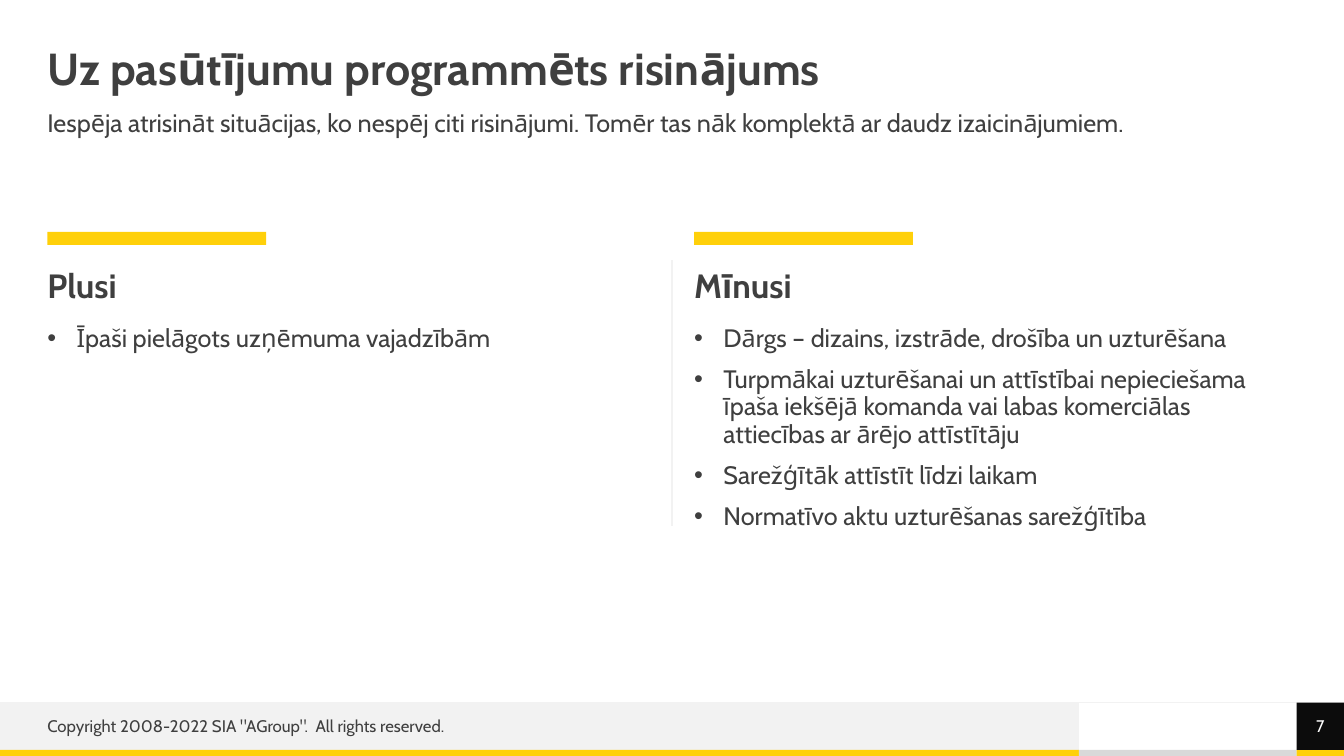
from dataclasses import dataclass

from lxml import etree
from pptx import Presentation
from pptx.dml.color import RGBColor
from pptx.enum.shapes import MSO_CONNECTOR, MSO_SHAPE
from pptx.enum.text import MSO_ANCHOR, MSO_AUTO_SIZE, PP_ALIGN
from pptx.oxml.ns import qn
from pptx.util import Inches, Pt

RECTANGLE = MSO_SHAPE.RECTANGLE
STRAIGHT = MSO_CONNECTOR.STRAIGHT
TOP, MIDDLE = MSO_ANCHOR.TOP, MSO_ANCHOR.MIDDLE
LEFT, CENTER = PP_ALIGN.LEFT, PP_ALIGN.CENTER
COMPARISON_LAYOUT = 4


@dataclass(frozen=True)
class Theme:
    font: str = "Cabin"
    text: str = "3F3F3F"
    accent: str = "FFD00A"
    pale: str = "F2F2F2"
    grey: str = "D9D9D9"
    black: str = "0C0C0C"
    white: str = "FFFFFF"
    title_size: int = 32
    heading_size: int = 24
    body_size: int = 18
    footer_size: int = 12


THEME = Theme()

# Page grid, in inches
WIDTH, HEIGHT = 13.33, 7.5
MARGIN = 0.47
CONTENT_WIDTH = WIDTH - 2 * MARGIN
GUTTER = 0.44
COLUMN_WIDTH = (CONTENT_WIDTH - GUTTER) / 2
COLUMN_TOP = 2.3
STRIPE = 0.06
BULLET_INDENT = 0.29

COLUMNS = [
    ("Plusi", ["Īpaši pielāgots uzņēmuma vajadzībām"]),
    ("Mīnusi", [
        "Dārgs – dizains, izstrāde, drošība un uzturēšana",
        "Turpmākai uzturēšanai un attīstībai nepieciešama īpaša iekšējā "
        "komanda vai labas komerciālas attiecības ar ārējo attīstītāju",
        "Sarežģītāk attīstīt līdzi laikam",
        "Normatīvo aktu uzturēšanas sarežģītība",
    ]),
]


def set_all(target, values):
    for name, value in values.items():
        setattr(target, name, value)


def inches(*lengths):
    return [Inches(length) for length in lengths]


def add_bullet(paragraph):
    properties = paragraph._p.get_or_add_pPr()
    indent = Inches(BULLET_INDENT)
    properties.set("marL", str(indent))
    properties.set("indent", str(-indent))
    colour = etree.SubElement(properties, qn("a:buClr"))
    etree.SubElement(colour, qn("a:srgbClr"), val=THEME.text)
    etree.SubElement(properties, qn("a:buChar"), char="•")


def write(shape, lines, size, colour=THEME.text, bold=False, anchor=TOP,
          align=LEFT, spacing=0.9, bulleted=False):
    frame = shape.text_frame
    set_all(frame, {
        "margin_left": 0, "margin_top": 0, "margin_right": 0, "margin_bottom": 0,
        "word_wrap": True, "auto_size": MSO_AUTO_SIZE.NONE,
        "vertical_anchor": anchor,
    })
    for index, line in enumerate(lines):
        paragraph = frame.add_paragraph() if index else frame.paragraphs[0]
        paragraph.text = line
        if bulleted:
            add_bullet(paragraph)
        set_all(paragraph, {
            "alignment": align, "line_spacing": spacing,
            "space_before": Pt(10 if index else 0), "space_after": Pt(0),
        })
        set_all(paragraph.font, {"name": THEME.font, "size": Pt(size), "bold": bold})
        paragraph.font.color.rgb = RGBColor.from_string(colour)


def place(shape, left, top, width, height):
    names = ("left", "top", "width", "height")
    set_all(shape, dict(zip(names, inches(left, top, width, height))))
    return shape


def add_block(slide, left, top, width, height, colour):
    block = slide.shapes.add_shape(RECTANGLE, *inches(left, top, width, height))
    block.shadow.inherit = False
    block.fill.solid()
    block.fill.fore_color.rgb = RGBColor.from_string(colour)
    block.line.fill.background()
    return block


def add_rule(slide, *ends):
    rule = slide.shapes.add_connector(STRAIGHT, *inches(*ends))
    rule.line.color.rgb = RGBColor.from_string(THEME.pale)
    rule.line.width = Pt(0.75)
    etree.SubElement(rule._element.spPr, qn("a:effectLst"))


def add_footer(slide, left, top, width, height):
    bar_height = height - STRIPE
    stripe_top = top + bar_height
    number_left = left + width - MARGIN
    bar_width = 10.7
    # Bar and bottom stripe
    add_block(slide, left, top, bar_width, bar_height, THEME.pale)
    add_block(slide, left, stripe_top, bar_width, STRIPE, THEME.accent)
    add_block(slide, left + bar_width, stripe_top,
              number_left - left - bar_width, STRIPE, THEME.grey)
    add_block(slide, number_left, stripe_top, MARGIN, STRIPE, THEME.accent)
    add_rule(slide, left, top, left + width, top)
    # Copyright and page number
    copyright_box = slide.shapes.add_textbox(
        *inches(left + MARGIN, top + 0.07, 6.19, 0.32))
    write(copyright_box, ['Copyright 2008-2022 SIA "AGroup".  All rights reserved.'],
          THEME.footer_size, anchor=MIDDLE, spacing=1.0)
    number = add_block(slide, number_left, top, MARGIN, bar_height, THEME.black)
    write(number, ["7"], THEME.footer_size, THEME.white, anchor=MIDDLE,
          align=CENTER, spacing=1.0)


def add_header(slide, left, top, width):
    title = place(slide.shapes.title, left, top, width, 0.47)
    write(title, ["Uz pasūtījumu programmēts risinājums"], THEME.title_size,
          bold=True, anchor=MIDDLE)
    subtitle = slide.shapes.add_textbox(*inches(left, top + 0.63, width, 0.39))
    write(subtitle, ["Iespēja atrisināt situācijas, ko nespēj citi risinājumi. "
                     "Tomēr tas nāk komplektā ar daudz izaicinājumiem."],
          THEME.body_size)


def fill_column(slide, heading_box, list_box, left, top, width, heading, points):
    add_block(slide, left, top, 2.17, 0.13, THEME.accent)
    place(heading_box, left, top + 0.37, width, 0.39)
    write(heading_box, [heading], THEME.heading_size, bold=True)
    place(list_box, left, top + 0.93, width, 2.4)
    write(list_box, points, THEME.body_size, bulleted=True)


def build_comparison(presentation):
    layout = presentation.slide_layouts[COMPARISON_LAYOUT]
    slide = presentation.slides.add_slide(layout)
    add_footer(slide, 0, 6.97, WIDTH, HEIGHT - 6.97)
    add_header(slide, MARGIN, MARGIN, CONTENT_WIDTH)
    # Two columns with a divider between them
    boxes = list(slide.placeholders)[1:]
    for index, (heading, points) in enumerate(COLUMNS):
        heading_box, list_box = boxes[2 * index:2 * index + 2]
        left = MARGIN + index * (COLUMN_WIDTH + GUTTER)
        fill_column(slide, heading_box, list_box, left, COLUMN_TOP,
                    COLUMN_WIDTH, heading, points)
    add_rule(slide, WIDTH / 2, COLUMN_TOP + 0.28, WIDTH / 2, COLUMN_TOP + 2.92)


def main():
    presentation = Presentation()
    set_all(presentation, {"slide_width": Inches(WIDTH),
                           "slide_height": Inches(HEIGHT)})
    build_comparison(presentation)
    presentation.save("out.pptx")


if __name__ == "__main__":
    main()
